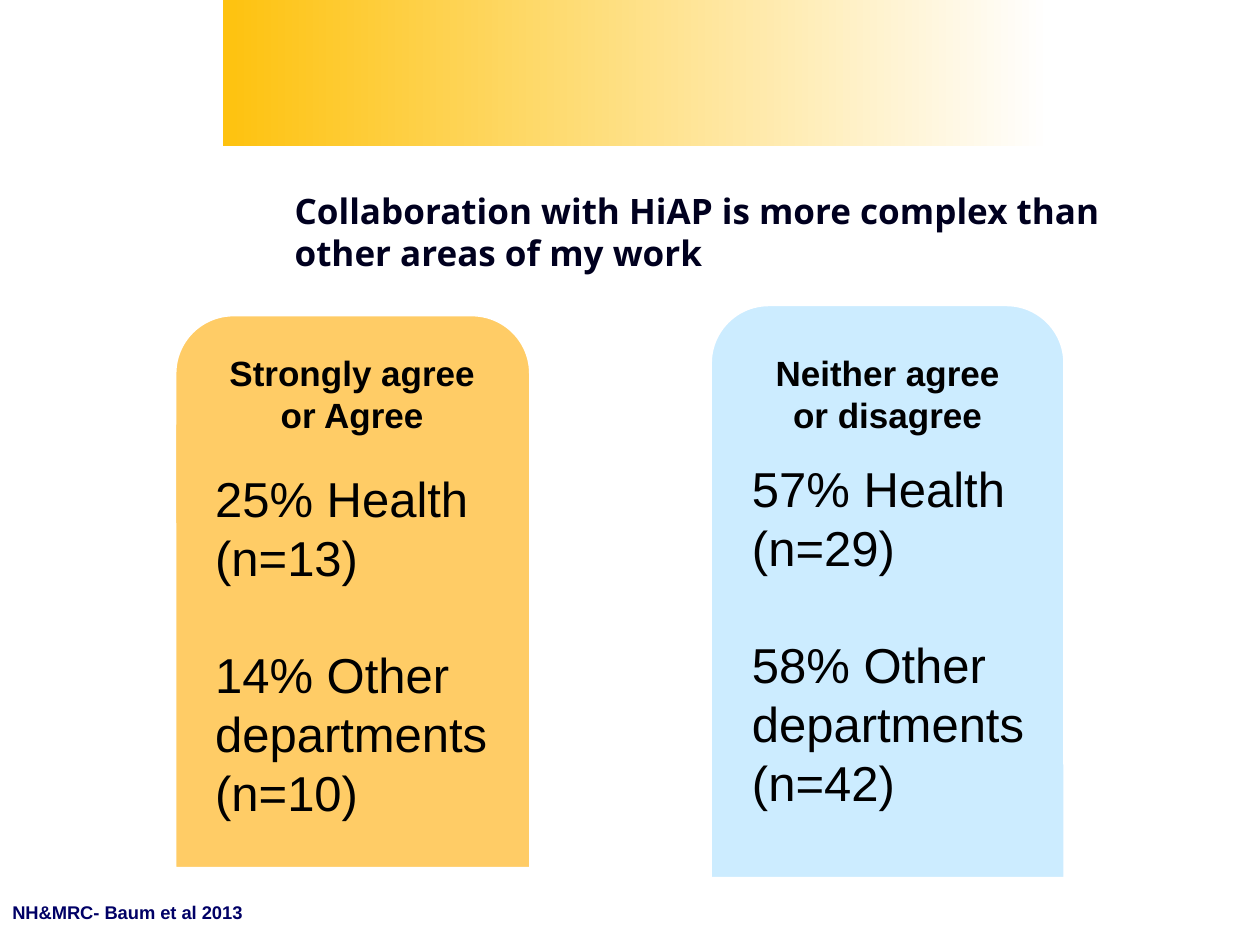
from dataclasses import dataclass
from typing import Optional

import pptx
import pptx.dml.color
import pptx.enum.shapes
import pptx.enum.text
import pptx.util

Inches = pptx.util.Inches
Pt = pptx.util.Pt
RGBColor = pptx.dml.color.RGBColor
Shape = pptx.enum.shapes.MSO_SHAPE
Align = pptx.enum.text.PP_ALIGN
Anchor = pptx.enum.text.MSO_ANCHOR

GOLD = RGBColor(0xFE, 0xC2, 0x0F)
WHITE = RGBColor(0xFF, 0xFF, 0xFF)
ORANGE = RGBColor(0xFF, 0xCC, 0x66)
PALE_BLUE = RGBColor(0xCC, 0xEC, 0xFF)
BLACK = RGBColor(0, 0, 0)
TITLE_INK = RGBColor(0, 0, 0x1F)
NAVY = RGBColor(0, 0, 0x66)
LINE_FACTOR = 1.2


@dataclass(frozen=True)
class Box:
    left: float
    top: float
    width: float
    height: float

    def lengths(self) -> list[pptx.util.Length]:
        return [Inches(v) for v in (self.left, self.top, self.width, self.height)]


@dataclass(frozen=True)
class TextStyle:
    size: float
    color: RGBColor = BLACK
    bold: bool = False
    font: str = "Arial"
    align: Align = Align.LEFT


@dataclass(frozen=True)
class Answer:
    heading: str
    health: tuple[str, ...]
    others: tuple[str, ...]
    color: RGBColor
    card: Box
    bands: tuple[Box, ...]
    cap: Box
    heading_box: Box
    figures_box: Box


TITLE_STYLE = TextStyle(20, TITLE_INK, True, "Open Sans")
HEADING_STYLE = TextStyle(20, bold=True, align=Align.CENTER)
FIGURES_STYLE = TextStyle(28)
SOURCE_STYLE = TextStyle(10.5, NAVY, True)

ANSWERS = (
    Answer(
        "Strongly agree or Agree",
        ("25% Health", "(n=13)"),
        ("14% Other", "departments", "(n=10)"),
        ORANGE,
        card=Box(1.38, 2.49, 2.84, 4.41),
        bands=(Box(1.4, 3.37, 2.74, 0.78),),
        cap=Box(1.54, 2.61, 2.51, 0.95),
        heading_box=Box(1.69, 2.74, 2.21, 1.07),
        figures_box=Box(1.61, 3.67, 2.5, 2.93),
    ),
    Answer(
        "Neither agree or disagree",
        ("57% Health", "(n=29)"),
        ("58% Other", "departments", "(n=42)"),
        PALE_BLUE,
        card=Box(5.63, 2.41, 2.83, 4.57),
        bands=(Box(5.67, 3.32, 2.73, 0.46), Box(7.93, 6.1, 0.23, 0.81)),
        cap=Box(5.79, 2.54, 2.5, 1),
        heading_box=Box(5.91, 2.74, 2.27, 1.11),
        figures_box=Box(5.87, 3.59, 2.5, 2.93),
    ),
)


def add_panel(slide, kind: Shape, box: Box, color: RGBColor,
              outline: Optional[RGBColor] = None):
    panel = slide.shapes.add_shape(kind, *box.lengths())
    panel.shadow.inherit = False
    panel.fill.solid()
    panel.fill.fore_color.rgb = color
    if outline is None:
        panel.line.fill.background()
    else:
        panel.line.color.rgb = outline
        panel.line.width = Pt(3)
    return panel


def add_text(slide, box: Box, groups: tuple[tuple[str, ...], ...],
             style: TextStyle, anchor: Anchor = Anchor.TOP,
             wrap: bool = True) -> None:
    frame = slide.shapes.add_textbox(*box.lengths()).text_frame
    frame.word_wrap = wrap
    frame.vertical_anchor = anchor
    line_height = Pt(style.size * LINE_FACTOR)
    paragraph = None
    for group in groups:
        for position, words in enumerate(group):
            opens_group = paragraph is not None and position == 0
            paragraph = frame.paragraphs[0] if paragraph is None else frame.add_paragraph()
            paragraph.alignment = style.align
            paragraph.line_spacing = line_height
            if opens_group:
                paragraph.space_before = line_height
            run = paragraph.add_run()
            run.text = words
            run.font.name = style.font
            run.font.size = Pt(style.size)
            run.font.bold = style.bold
            run.font.color.rgb = style.color


def add_banner(slide, box: Box) -> None:
    banner = add_panel(slide, Shape.RECTANGLE, box, GOLD)
    banner.fill.gradient()
    banner.fill.gradient_angle = 0
    for stop, color, position in zip(banner.fill.gradient_stops, (GOLD, WHITE), (0, 1)):
        stop.color.rgb = color
        stop.position = position


def add_answer(slide, answer: Answer) -> None:
    add_panel(slide, Shape.ROUND_2_SAME_RECTANGLE, answer.card, answer.color, WHITE)
    for band in answer.bands:
        add_panel(slide, Shape.RECTANGLE, band, answer.color)
    cap = add_panel(slide, Shape.ROUND_2_SAME_RECTANGLE, answer.cap, answer.color)
    cap.adjustments[0] = 0.46
    add_text(slide, answer.heading_box, ((answer.heading,),), HEADING_STYLE)
    add_text(slide, answer.figures_box, (answer.health, answer.others), FIGURES_STYLE)


def main() -> None:
    deck = pptx.Presentation()
    deck.slide_width, deck.slide_height = Inches(10), Inches(7.5)
    slide = deck.slides.add_slide(deck.slide_layouts[6])
    add_banner(slide, Box(1.77, 0, 6.56, 1.16))
    add_text(slide, Box(2.24, 1.31, 7.24, 1.05),
             (("Collaboration with HiAP is more complex than other areas of my work",),),
             TITLE_STYLE, Anchor.MIDDLE)
    for answer in ANSWERS:
        add_answer(slide, answer)
    add_text(slide, Box(0, 7.1, 2.06, 0.28), (("NH&MRC- Baum et al 2013",),),
             SOURCE_STYLE, wrap=False)
    deck.save("out.pptx")


if __name__ == "__main__":
    main()
